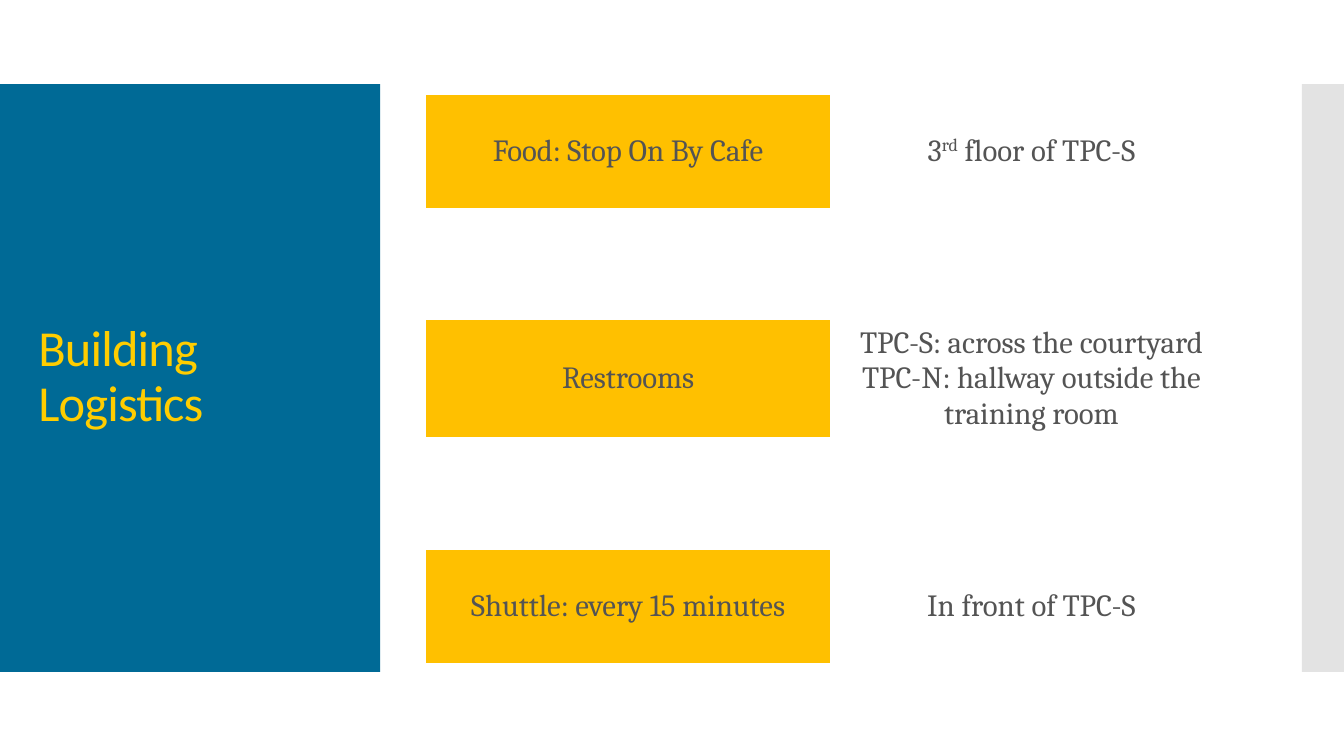
"""Build the building logistics slide: title panel and a grid of places."""
from dataclasses import dataclass

from lxml.etree import SubElement
from pptx import Presentation
from pptx.dml.color import RGBColor
from pptx.enum.shapes import MSO_SHAPE
from pptx.enum.text import MSO_ANCHOR, PP_ALIGN
from pptx.oxml.ns import qn
from pptx.util import Inches, Pt


@dataclass(frozen=True)
class Theme:
    """Colours, fonts and type sizes."""
    panel: RGBColor = RGBColor(0x00, 0x6A, 0x96)
    strip: RGBColor = RGBColor(0xC8, 0xC8, 0xC8)
    title: RGBColor = RGBColor(0xFF, 0xCD, 0x00)
    topic: RGBColor = RGBColor(0xFF, 0xC0, 0x00)
    body: RGBColor = RGBColor(0x54, 0x54, 0x54)
    title_font: str = "Calibri"
    body_font: str = "Cambria"
    title_size: Pt = Pt(36)
    body_size: Pt = Pt(22)


@dataclass(frozen=True)
class Run:
    """A piece of text, raised or on the baseline."""
    text: str
    raised: bool = False


@dataclass(frozen=True)
class Place:
    """A topic and the paragraphs that say where it is."""
    topic: str
    where: list[list[Run]]


@dataclass(frozen=True)
class Panel:
    """A full-height side panel, with left and width as columns."""
    left: float
    width: float
    color: RGBColor
    alpha: int = 100


THEME = Theme()
WIDTH, HEIGHT = Inches(13.33), Inches(7.5)
COL, ROW = WIDTH / 32, HEIGHT / 9
TABLE_COL, TABLE_ROW = Inches(4), Inches(1.12)
NO_STYLE = "{2D5ABB26-0587-4C30-8999-92F81FD0307C}"
PANELS = [Panel(0, 9.05, THEME.panel), Panel(31, 1, THEME.strip, 50)]
PLACES = [
    Place("Food: Stop On By Cafe",
          [[Run("3"), Run("rd", True), Run(" floor of TPC-S")]]),
    Place("Restrooms",
          [[Run("TPC-S: across the courtyard")],
           [Run("TPC-N: hallway outside the training room")]]),
    Place("Shuttle: every 15 minutes", [[Run("In front of TPC-S")]]),
]


def add_panel(s, panel: Panel) -> None:
    """Draw a side panel behind the title."""
    sp = s.shapes.add_shape(MSO_SHAPE.RECTANGLE, int(panel.left * COL), int(ROW),
                            int(panel.width * COL), int(7 * ROW))
    sp.shadow.inherit = False
    sp.line.fill.background()
    sp.fill.solid()
    sp.fill.fore_color.rgb = panel.color
    if panel.alpha < 100:
        color = sp.element.spPr.find(f".//{qn('a:srgbClr')}")
        SubElement(color, qn("a:alpha"), val=str(panel.alpha * 1000))
    s.shapes.title.element.addprevious(sp.element)


def set_title(s, text: str) -> None:
    """Place and format the title placeholder."""
    sp = s.shapes.title
    sp.left, sp.top = Inches(0.28), Inches(1.23)
    sp.width, sp.height = Inches(3.22), Inches(5.03)
    tf = sp.text_frame
    tf.word_wrap = True
    tf.vertical_anchor = MSO_ANCHOR.MIDDLE
    p = tf.paragraphs[0]
    p.alignment = PP_ALIGN.LEFT
    p.line_spacing = 0.9
    r = p.add_run()
    r.text = text
    r.font.name, r.font.size = THEME.title_font, THEME.title_size
    r.font.color.rgb = THEME.title
    r._r.get_or_add_rPr().set("spc", "-60")


def fill_cell(cell, paragraphs: list[list[Run]]) -> None:
    """Write centred paragraphs into a table cell."""
    cell.vertical_anchor = MSO_ANCHOR.MIDDLE
    tf = cell.text_frame
    for i, runs in enumerate(paragraphs):
        p = tf.add_paragraph() if i else tf.paragraphs[0]
        p.alignment = PP_ALIGN.CENTER
        for run in runs:
            r = p.add_run()
            r.text = run.text
            r.font.name, r.font.size = THEME.body_font, THEME.body_size
            r.font.color.rgb = THEME.body
            if run.raised:
                r._r.get_or_add_rPr().set("baseline", "30000")


def add_places(s, places: list[Place]) -> None:
    """Draw the places on every other row of a two-column table."""
    rows = 2 * len(places) - 1
    frame = s.shapes.add_table(rows, 2, Inches(4.23), Inches(0.94),
                               2 * TABLE_COL, rows * TABLE_ROW)
    table = frame.table
    table.first_row = table.horz_banding = False
    frame.element.find(f".//{qn('a:tableStyleId')}").text = NO_STYLE
    for column in table.columns:
        column.width = TABLE_COL
    for row in table.rows:
        row.height = TABLE_ROW
    for cell in table.iter_cells():
        cell.fill.background()
    for i, place in enumerate(places):
        topic, where = table.cell(2 * i, 0), table.cell(2 * i, 1)
        topic.fill.solid()
        topic.fill.fore_color.rgb = THEME.topic
        fill_cell(topic, [[Run(place.topic)]])
        fill_cell(where, place.where)


def main() -> None:
    """Build and save the slide."""
    prs = Presentation()
    prs.slide_width, prs.slide_height = WIDTH, HEIGHT
    s = prs.slides.add_slide(prs.slide_layouts[5])
    for panel in PANELS:
        add_panel(s, panel)
    set_title(s, "Building Logistics")
    add_places(s, PLACES)
    prs.save("out.pptx")


if __name__ == "__main__":
    main()
